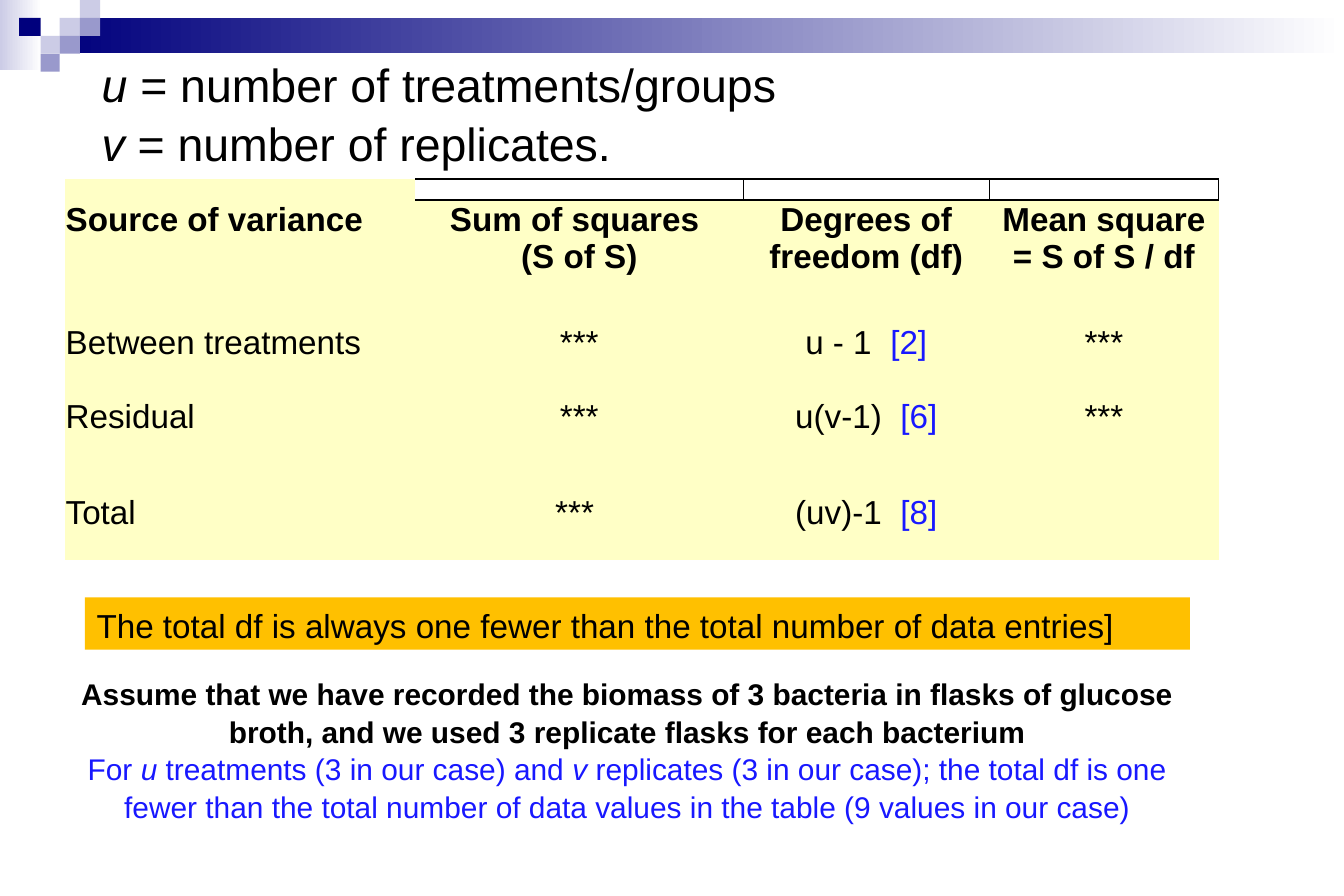
from typing import NamedTuple, Optional, Sequence

from pptx import Presentation
from pptx.dml.color import RGBColor
from pptx.enum.shapes import MSO_SHAPE
from pptx.enum.text import MSO_ANCHOR, PP_ALIGN
from pptx.oxml import parse_xml
from pptx.oxml.ns import nsdecls, qn
from pptx.util import Pt

COLORS = {
    "navy": "00007D", "violet": "9999CC", "lilac": "CCCCE6", "white": "FFFFFF",
    "cream": "FFFFC6", "amber": "FFC000", "blue": "1818FF", "black": "000000",
}
FONT = "Arial"
NO_STYLE = "{2D5ABB26-0587-4C30-8999-92F81FD0307C}"


class Box(NamedTuple):
    left: float
    top: float
    width: float
    height: float


class Block(NamedTuple):
    box: Box
    color: str
    fade_to: Optional[str] = None


class Run(NamedTuple):
    text: str
    italic: bool = False
    color: Optional[str] = None


class Para(NamedTuple):
    runs: Sequence[Run]
    size: float
    color: str = "black"
    bold: bool = False
    align: PP_ALIGN = PP_ALIGN.LEFT
    spacing: float = 1.05


BLOCKS = [
    Block(Box(0, 0, 25.2, 42), "lilac", "white"),
    Block(Box(36.5, 10.8, 773.5, 21.4), "navy", "white"),
    Block(Box(36, 10.8, 12.2, 10.8), "lilac"),
    Block(Box(48.2, 0, 12.2, 10.8), "lilac"),
    Block(Box(48.2, 10.8, 12.2, 10.8), "violet"),
    Block(Box(24.5, 21.6, 11.5, 10.8), "lilac"),
    Block(Box(11.5, 10.8, 13, 10.8), "navy"),
    Block(Box(36, 21.6, 12.2, 10.8), "violet"),
    Block(Box(24.5, 32.4, 11.5, 10.8), "violet"),
]
TITLE = [
    Para([Run("u ", True), Run("= number of treatments/groups")], 28),
    Para([Run("v", True), Run(" = number of replicates.")], 28),
]
COL_WIDTHS = [211.4, 197.7, 148.3, 138.2]
ROW_HEIGHTS = [12.6, 71.1, 30.2, 58.3, 57.6]
ROWS = [
    ["", "", "", ""],
    ["Source of variance", "Sum of squares \v(S of S)",
     "Degrees of freedom (df)", "Mean square\v= S of S / df"],
    ["Between treatments", "***", "u - 1  [2]", "***"],
    ["Residual", "***", "u(v-1)  [6]", "***"],
    ["Total", "*** ", "(uv)-1  [8]", ""],
]
RULE = [Para([Run("The total df is always one fewer than the total number "
                  "of data entries]")], 20)]
EXAMPLE = [
    Para([Run("Assume that we have recorded the biomass of 3 bacteria in flasks "
              "of glucose broth, and we used 3 replicate flasks for each bacterium")],
         18, bold=True, align=PP_ALIGN.CENTER),
    Para([Run("For "), Run("u", True), Run(" treatments (3 in our case) and "),
          Run("v", True),
          Run(" replicates (3 in our case); the total df is one fewer than the total "
              "number of data values in the table (9 values in our case)")],
         18, "blue", align=PP_ALIGN.CENTER),
]


def rgb(name: str) -> RGBColor:
    return RGBColor.from_string(COLORS[name])


def add_block(shapes, block: Block):
    sp = shapes.add_shape(MSO_SHAPE.RECTANGLE, *map(Pt, block.box))
    sp.shadow.inherit = False
    sp.line.fill.background()
    if block.fade_to:
        sp.fill.gradient()
        sp.fill.gradient_angle = 0
        for stop, name in zip(sp.fill.gradient_stops, (block.color, block.fade_to)):
            stop.color.rgb = rgb(name)
    else:
        sp.fill.solid()
        sp.fill.fore_color.rgb = rgb(block.color)
    return sp


def write(tf, paras: Sequence[Para], anchor: MSO_ANCHOR = MSO_ANCHOR.MIDDLE) -> None:
    tf.word_wrap = True
    tf.vertical_anchor = anchor
    for i, para in enumerate(paras):
        p = tf.add_paragraph() if i else tf.paragraphs[0]
        write_paragraph(p, para)


def write_paragraph(p, para: Para) -> None:
    p.alignment = para.align
    p.line_spacing = para.spacing
    p.space_before = Pt(0)
    p.font.name = FONT
    p.font.size = Pt(para.size)
    p.font.bold = para.bold
    p.font.color.rgb = rgb(para.color)
    for run in para.runs:
        for i, line in enumerate(run.text.split("\v")):
            if i:
                p.add_line_break()
            r = p.add_run()
            r.text = line
            if run.italic:
                r.font.italic = True
            if run.color:
                r.font.color.rgb = rgb(run.color)


def outline_cell(cell) -> None:
    """Draw the right, top and bottom edges of a cell."""
    for i, edge in enumerate(("lnR", "lnT", "lnB")):
        line = parse_xml(
            f'<a:{edge} {nsdecls("a")} w="12700"><a:solidFill>'
            f'<a:srgbClr val="{COLORS["black"]}"/></a:solidFill></a:{edge}>')
        cell._tc.get_or_add_tcPr().insert(i, line)


def fill_cell(cell, text: str, row: int, col: int) -> None:
    cell.margin_left = cell.margin_right = Pt(0.7)
    cell.margin_top = cell.margin_bottom = Pt(0.7)
    cell.vertical_anchor = MSO_ANCHOR.TOP if row < 2 else MSO_ANCHOR.MIDDLE
    if row == 0 and col > 0:
        cell.fill.background()
        outline_cell(cell)
    else:
        cell.fill.solid()
        cell.fill.fore_color.rgb = rgb("cream")
    p = cell.text_frame.paragraphs[0]
    if not text:
        p._p.get_or_add_endParaRPr().set("sz", "800")
        return
    label, bracket, value = text.partition("[")
    runs = [Run(label)]
    if bracket:
        runs.append(Run(bracket + value, color="blue"))
    align = PP_ALIGN.CENTER if col else PP_ALIGN.LEFT
    write_paragraph(p, Para(runs, 20, bold=row == 1, align=align, spacing=1.0))


def add_variance_table(shapes) -> None:
    box = Box(38.9, 108, sum(COL_WIDTHS), sum(ROW_HEIGHTS))
    table = shapes.add_table(len(ROWS), len(COL_WIDTHS), *map(Pt, box)).table
    table.first_row = table.horz_banding = False
    table._tbl.tblPr.find(qn("a:tableStyleId")).text = NO_STYLE
    for column, width in zip(table.columns, COL_WIDTHS):
        column.width = Pt(width)
    for r, (height, texts) in enumerate(zip(ROW_HEIGHTS, ROWS)):
        table.rows[r].height = Pt(height)
        for c, text in enumerate(texts):
            fill_cell(table.cell(r, c), text, r, c)


def main() -> None:
    prs = Presentation()
    prs.slide_width, prs.slide_height = Pt(810), Pt(540)
    shapes = prs.slides.add_slide(prs.slide_layouts[5]).shapes
    title = shapes.title
    for block in BLOCKS:
        add_block(shapes, block)
    title._element.getparent().append(title._element)  # above the banner
    title.left, title.top, title.width, title.height = map(Pt, Box(54, 30.2, 756, 74.9))
    write(title.text_frame, TITLE)
    add_variance_table(shapes)
    banner = add_block(shapes, Block(Box(51.1, 360, 666, 31.5), "amber"))
    write(banner.text_frame, RULE, MSO_ANCHOR.TOP)
    example = shapes.add_textbox(*map(Pt, Box(38.9, 383.8, 678.2, 116.6)))
    write(example.text_frame, EXAMPLE, MSO_ANCHOR.BOTTOM)
    prs.save("out.pptx")


if __name__ == "__main__":
    main()
